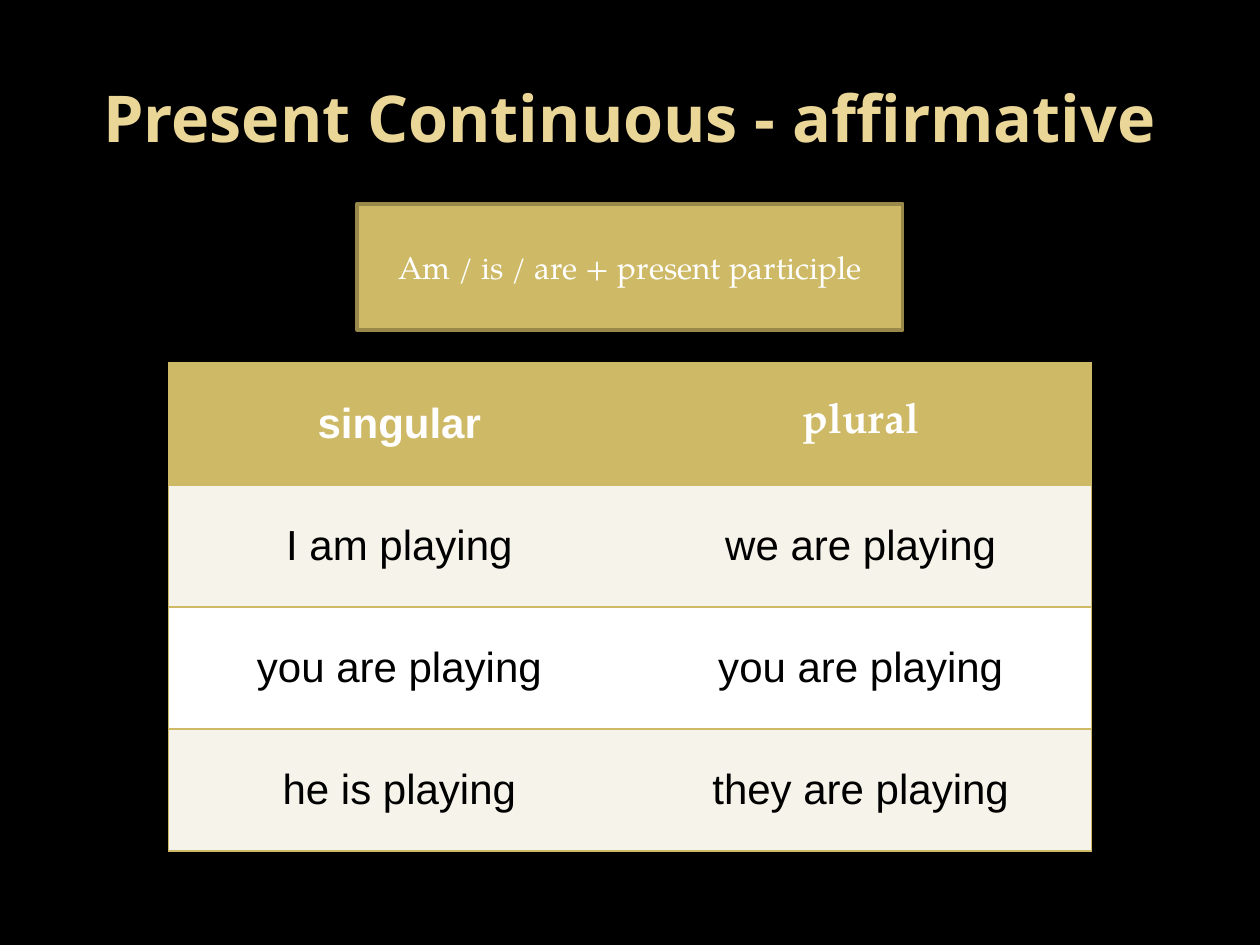
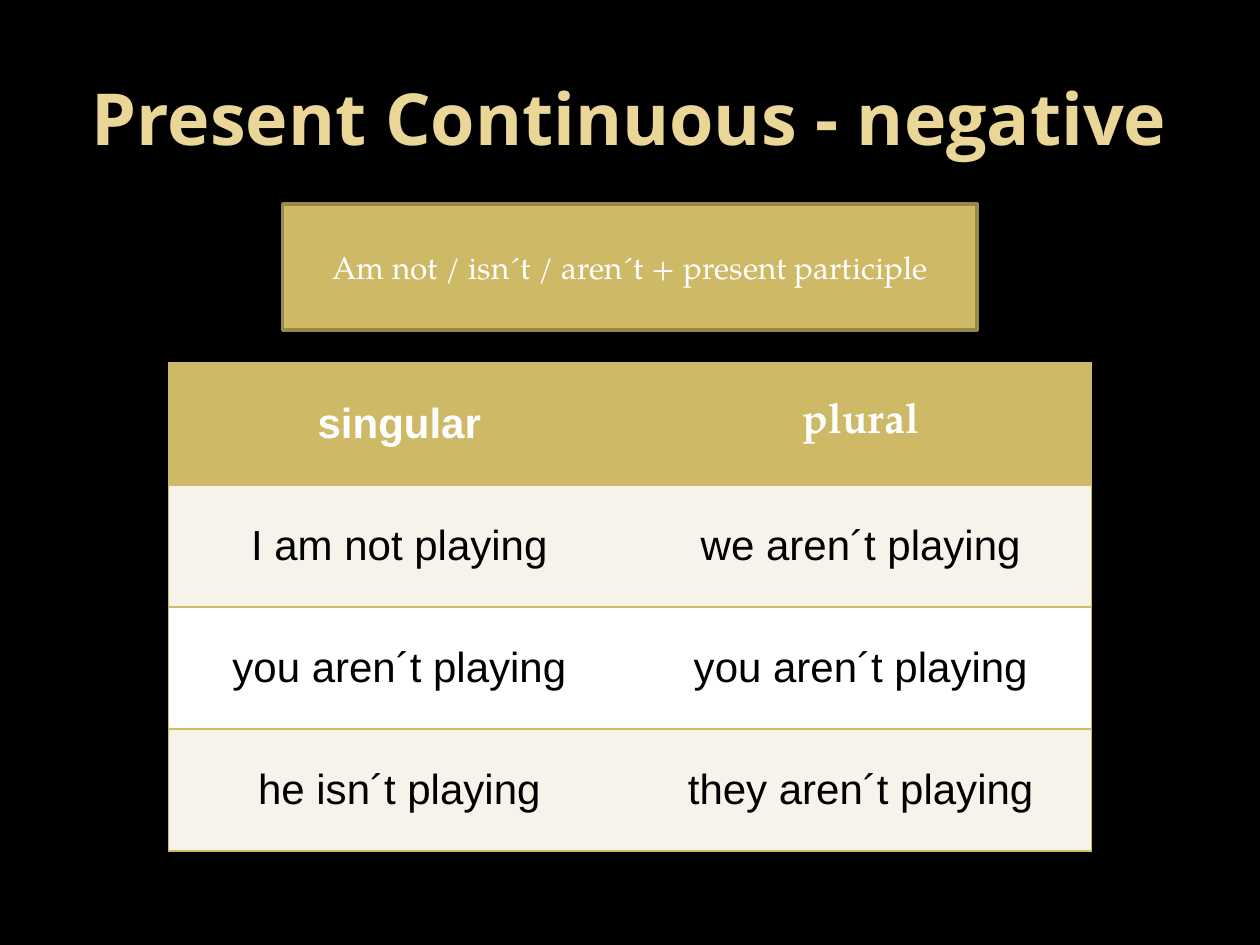
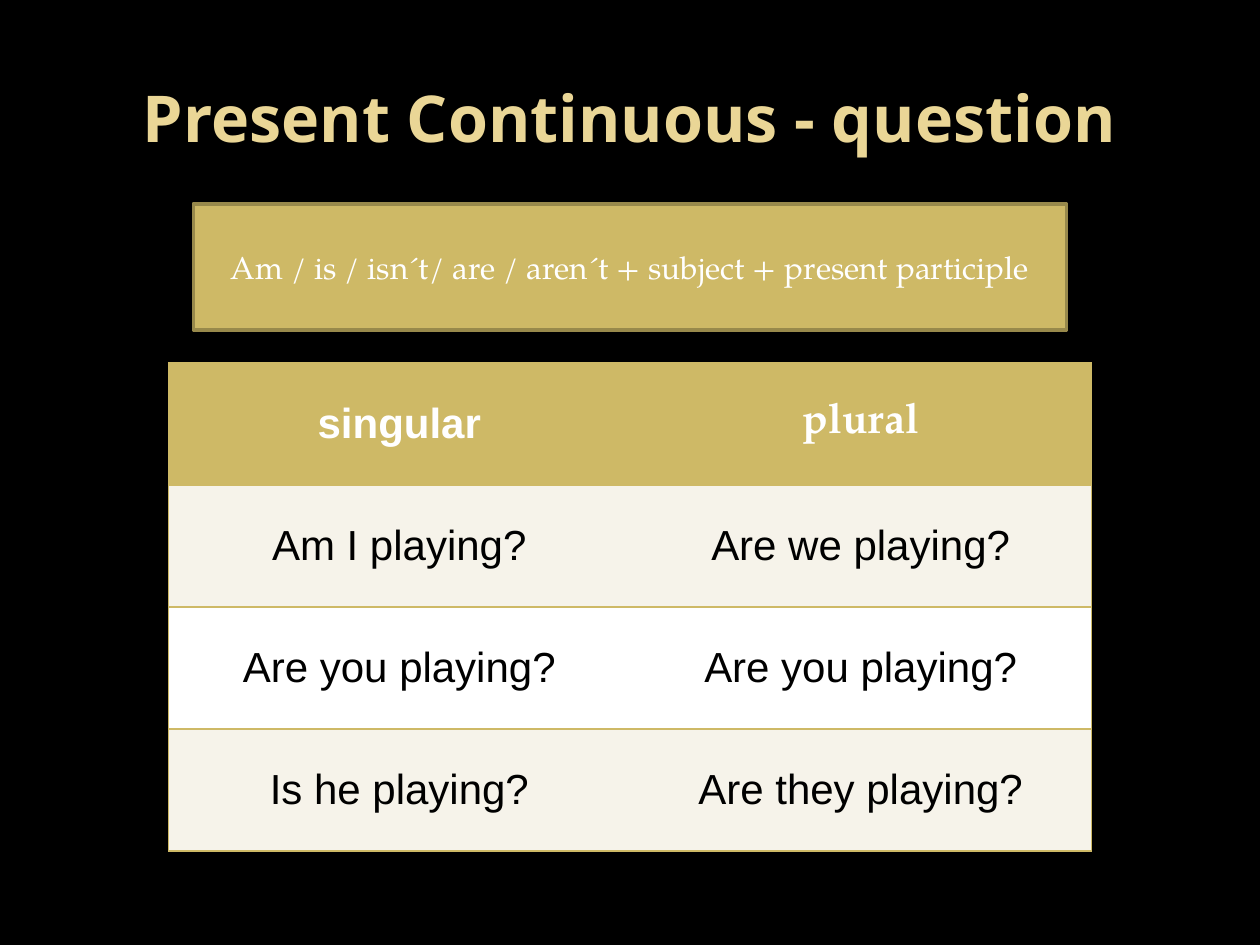
from dataclasses import dataclass
from typing import Any

from lxml import etree
from pptx import Presentation
from pptx.dml.color import RGBColor
from pptx.enum.shapes import MSO_SHAPE
from pptx.enum.text import MSO_ANCHOR, MSO_AUTO_SIZE, PP_ALIGN
from pptx.oxml.ns import qn
from pptx.util import Cm, Pt

RECTANGLE = MSO_SHAPE.RECTANGLE
MIDDLE = MSO_ANCHOR.MIDDLE
NO_AUTOFIT = MSO_AUTO_SIZE.NONE
CENTER = PP_ALIGN.CENTER

# Shared colours and fonts
BLACK, WHITE = "000000", "FFFFFF"
GOLD, DARK_GOLD, PALE_GOLD, CREAM = "CEB966", "98894B", "EAD696", "F6F3EA"
TITLE_FONT, RULE_FONT, TABLE_FONT = "Open Sans", "TeX Gyre Pagella", "Arial"

# Shared layout
PAGE_WIDTH, PAGE_HEIGHT = Cm(25.4), Cm(19.05)
TITLE_PLACE = {"left": Cm(1.27), "top": Cm(0.76), "width": Cm(22.86), "height": Cm(3.18)}
RULE_TOP, RULE_HEIGHT = Cm(4.11), Cm(2.54)
TABLE_TOP, COLUMN_WIDTH, ROW_HEIGHT = Cm(7.32), Cm(9.3), Cm(2.46)
TITLE_ONLY_LAYOUT = 5
HEADER = ("singular", "plural")
HEADER_FONTS = (TABLE_FONT, RULE_FONT)


@dataclass(frozen=True)
class GrammarPage:
    title: str
    title_size: float
    rule: str
    rule_width: float
    forms: tuple[tuple[str, str], ...]


PAGES = (
    GrammarPage(
        "Present Continuous - affirmative", 36.9,
        "Am / is / are + present participle", 11,
        (("I am playing", "we are playing"),
         ("you are playing", "you are playing"),
         ("he is playing", "they are playing")),
    ),
    GrammarPage(
        "Present Continuous - negative", 41,
        "Am not / isn´t / aren´t + present participle", 14,
        (("I am not playing", "we aren´t playing"),
         ("you aren´t playing", "you aren´t playing"),
         ("he isn´t playing", "they aren´t playing")),
    ),
    GrammarPage(
        "Present Continuous - question", 36.9,
        "Am / is / isn´t/ are / aren´t + subject + present participle", 17.6,
        (("Am I playing?", "Are we playing?"),
         ("Are you playing?", "Are you playing?"),
         ("Is he playing?", "Are they playing?")),
    ),
)


def apply_format(target: Any, values: dict[str, Any]) -> None:
    for name, value in values.items():
        setattr(target, name, value)


def paint(fill: Any, color: str) -> None:
    fill.solid()
    fill.fore_color.rgb = RGBColor.from_string(color)


def write_text(frame: Any, text: str, font: str, size: float, color: str,
               bold: bool = False) -> None:
    para = frame.paragraphs[0]
    para.alignment = CENTER
    span = para.add_run()
    span.text = text
    apply_format(span.font, {"name": font, "size": Pt(size), "bold": bold})
    paint(span.font.fill, color)


def set_borders(cell: Any, borders: dict[str, str | None]) -> None:
    """Draw 1 pt cell borders, given in schema order; None hides a side."""
    properties = cell._tc.get_or_add_tcPr()
    for position, (side, color) in enumerate(borders.items()):
        line = etree.Element(qn(f"a:ln{side}"), w=str(Pt(1)))
        if color:
            fill = etree.SubElement(line, qn("a:solidFill"))
            etree.SubElement(fill, qn("a:srgbClr"), val=color)
        else:
            etree.SubElement(line, qn("a:noFill"))
        properties.insert(position, line)


def add_title(slide: Any, page: GrammarPage) -> None:
    title = slide.shapes.title
    apply_format(title, TITLE_PLACE)
    apply_format(title.text_frame, {"vertical_anchor": MIDDLE, "word_wrap": True,
                                    "auto_size": NO_AUTOFIT})
    write_text(title.text_frame, page.title, TITLE_FONT, page.title_size, PALE_GOLD, True)


def add_forms_table(slide: Any, page: GrammarPage) -> None:
    rows = (HEADER, *page.forms)
    width = COLUMN_WIDTH * len(HEADER)
    table = slide.shapes.add_table(
        len(rows), len(HEADER), (PAGE_WIDTH - width) // 2, TABLE_TOP,
        width, ROW_HEIGHT * len(rows)).table
    apply_format(table, {"first_row": False, "horz_banding": False})

    for row_index, row in enumerate(rows):
        is_header = row_index == 0
        background = GOLD if is_header else (WHITE, CREAM)[row_index % 2]
        for column_index, text in enumerate(row):
            cell = table.cell(row_index, column_index)
            cell.vertical_anchor = MIDDLE
            paint(cell.fill, background)
            font = HEADER_FONTS[column_index] if is_header else TABLE_FONT
            color = WHITE if is_header else BLACK
            write_text(cell.text_frame, text, font, 24, color, is_header)
            set_borders(cell, {
                "L": GOLD if column_index == 0 else None,
                "R": GOLD if column_index == len(row) - 1 else None,
                "T": GOLD,
                "B": GOLD,
            })


def add_rule_box(slide: Any, page: GrammarPage) -> None:
    width = Cm(page.rule_width)
    box = slide.shapes.add_shape(
        RECTANGLE, (PAGE_WIDTH - width) // 2, RULE_TOP, width, RULE_HEIGHT)
    box.shadow.inherit = False
    paint(box.fill, GOLD)
    paint(box.line.fill, DARK_GOLD)
    box.line.width = Pt(2)
    apply_format(box.text_frame, {"vertical_anchor": MIDDLE, "word_wrap": True})
    write_text(box.text_frame, page.rule, RULE_FONT, 18, WHITE)


def main() -> None:
    deck = Presentation()
    apply_format(deck, {"slide_width": PAGE_WIDTH, "slide_height": PAGE_HEIGHT})
    paint(deck.slide_master.background.fill, BLACK)

    for page in PAGES:
        slide = deck.slides.add_slide(deck.slide_layouts[TITLE_ONLY_LAYOUT])
        add_title(slide, page)
        add_forms_table(slide, page)
        add_rule_box(slide, page)

    deck.save("out.pptx")


if __name__ == "__main__":
    main()
